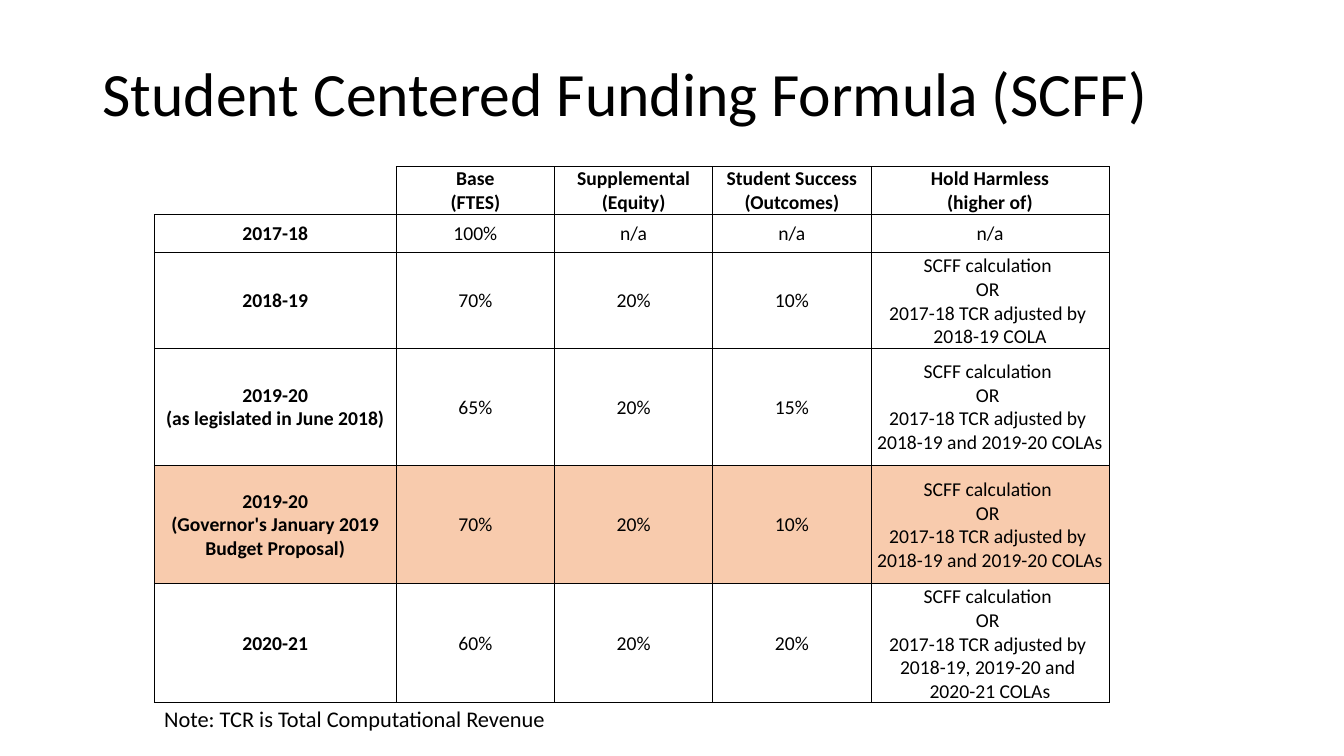
import copy

import lxml.etree
import pptx
import pptx.dml.color
import pptx.enum.text
import pptx.oxml.ns
import pptx.util

Inches = pptx.util.Inches
Pt = pptx.util.Pt
ANCHOR = pptx.enum.text.MSO_ANCHOR
ALIGN = pptx.enum.text.PP_ALIGN
qn = pptx.oxml.ns.qn

TITLE = "Student Centered Funding Formula (SCFF)"
NOTE = "Note: TCR is Total Computational Revenue"
HOLD_HARMLESS = "SCFF calculation \nOR \n2017-18 TCR adjusted by \n"
FUNDING_ROWS = [
    ("", "Base\n(FTES)", "Supplemental (Equity)", "Student Success (Outcomes)",
     "Hold Harmless\n(higher of)"),
    ("2017-18", "100%", "n/a", "n/a", "n/a"),
    ("2018-19", "70%", "20%", "10%", HOLD_HARMLESS + "2018-19 COLA"),
    ("2019-20\n(as legislated in June 2018)", "65%", "20%", "15%",
     HOLD_HARMLESS + "2018-19 and 2019-20 COLAs"),
    ("2019-20\n(Governor's January 2019 Budget Proposal)", "70%", "20%", "10%",
     HOLD_HARMLESS + "2018-19 and 2019-20 COLAs"),
    ("2020-21", "60%", "20%", "20%",
     HOLD_HARMLESS + "2018-19, 2019-20 and \n2020-21 COLAs"),
]
PROPOSAL_ROW = 4
COLUMN_WIDTHS = (2.4, 1.57, 1.57, 1.57, 2.36)
ROW_HEIGHTS = (0.47, 0.38, 0.93, 1.17, 1.17, 1.17)
TABLE_LEFT, TABLE_TOP = 1.53, 1.65

THEME = {
    "font": "Calibri",
    "text": "000000",
    "border": "000000",
    "border_width": 0.5,
    "highlight": "F8CBAD",
    "title_size": 44,
    "table_size": 14,
    "note_size": 16,
    "plain_table_style": "{2D5ABB26-0587-4C30-8999-92F81FD0307C}",
}


def set_all(target, values):
    for name, value in values.items():
        setattr(target, name, value)


def write_text(paragraph, text, size, bold=False):
    """Fill a paragraph; line breaks take the same format as the runs."""
    paragraph.text = text
    for run in paragraph.runs:
        set_all(run.font, {"name": THEME["font"], "size": Pt(size), "bold": bold})
        run.font.color.rgb = pptx.dml.color.RGBColor.from_string(THEME["text"])
    for line_break in paragraph._p.findall(qn("a:br")):
        line_break.insert(0, copy.deepcopy(paragraph.runs[0]._r.find(qn("a:rPr"))))


def add_text(slide, box, text, size, frame_format):
    shape = slide.shapes.add_textbox(*map(Inches, box))
    set_all(shape.text_frame, frame_format)
    paragraph = shape.text_frame.paragraphs[0]
    write_text(paragraph, text, size)
    return paragraph


def set_borders(cell, visible_sides):
    properties = cell._tc.get_or_add_tcPr()
    for side in "LRTB":
        line = lxml.etree.SubElement(properties, qn(f"a:ln{side}"),
                                     w=str(Pt(THEME["border_width"])))
        if side in visible_sides:
            fill = lxml.etree.SubElement(line, qn("a:solidFill"))
            lxml.etree.SubElement(fill, qn("a:srgbClr"), val=THEME["border"])
        else:
            lxml.etree.SubElement(line, qn("a:noFill"))


def add_funding_table(slide):
    frame = slide.shapes.add_table(
        len(ROW_HEIGHTS), len(COLUMN_WIDTHS), Inches(TABLE_LEFT), Inches(TABLE_TOP),
        Inches(sum(COLUMN_WIDTHS)), Inches(sum(ROW_HEIGHTS)))
    table = frame.table
    set_all(table, {"first_row": False, "horz_banding": False})
    table._tbl.tblPr.find(qn("a:tableStyleId")).text = THEME["plain_table_style"]
    for column, width in zip(table.columns, COLUMN_WIDTHS):
        column.width = Inches(width)
    for row, height in zip(table.rows, ROW_HEIGHTS):
        row.height = Inches(height)

    margin = Inches(0.01)
    for row_index, texts in enumerate(FUNDING_ROWS):
        for column_index, text in enumerate(texts):
            cell = table.cell(row_index, column_index)
            header = row_index == 0
            bottom = header and column_index < len(texts) - 1
            set_all(cell, {
                "margin_left": margin, "margin_right": margin,
                "margin_top": margin, "margin_bottom": 0,
                "vertical_anchor": ANCHOR.BOTTOM if bottom else ANCHOR.MIDDLE,
            })
            set_borders(cell, "LRTB" if text else "RB")
            if row_index == PROPOSAL_ROW:
                cell.fill.solid()
                cell.fill.fore_color.rgb = pptx.dml.color.RGBColor.from_string(
                    THEME["highlight"])
            else:
                cell.fill.background()
            if text:
                paragraph = cell.text_frame.paragraphs[0]
                paragraph.alignment = ALIGN.CENTER
                write_text(paragraph, text, THEME["table_size"],
                           bold=header or column_index == 0)


def main():
    presentation = pptx.Presentation()
    set_all(presentation, {"slide_width": Inches(13.33), "slide_height": Inches(7.5)})
    slide = presentation.slides.add_slide(presentation.slide_layouts[6])

    title = add_text(slide, (0.92, 0.4, 11.5, 1.11), TITLE, THEME["title_size"],
                     {"word_wrap": True, "vertical_anchor": ANCHOR.MIDDLE})
    title.line_spacing = 0.9
    add_funding_table(slide)
    add_text(slide, (TABLE_LEFT, 6.95, 4.03, 0.37), NOTE, THEME["note_size"],
             {"word_wrap": False,
              "auto_size": pptx.enum.text.MSO_AUTO_SIZE.SHAPE_TO_FIT_TEXT})
    presentation.save("out.pptx")


if __name__ == "__main__":
    main()
